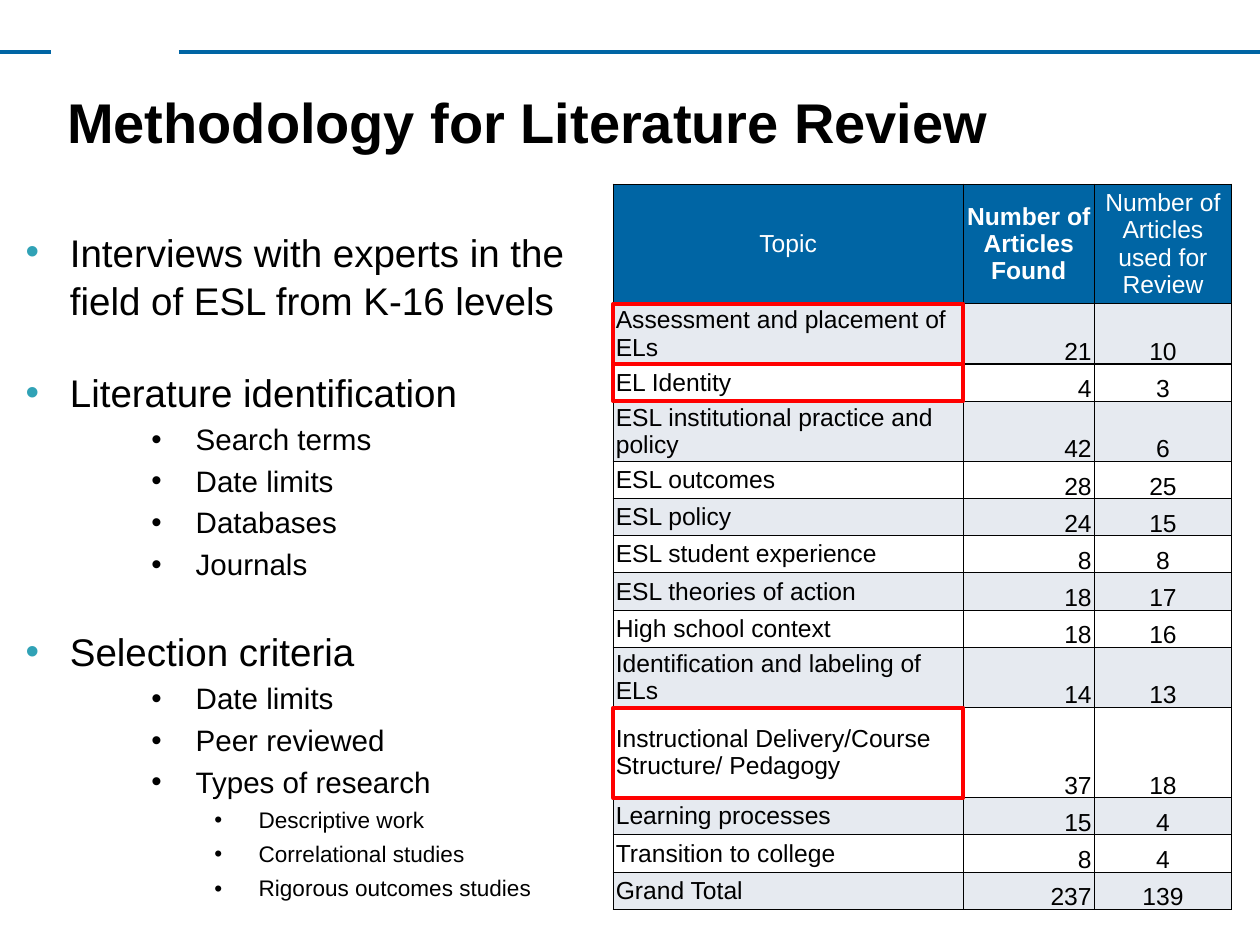
import pptx
import pptx.util
import pptx.dml.color
import pptx.enum.shapes
import pptx.enum.text
import pptx.oxml.ns
import lxml.etree

PX = 9144  # 100 px to the inch
Pt = pptx.util.Pt
ALIGN = pptx.enum.text.PP_ALIGN
ANCHOR = pptx.enum.text.MSO_ANCHOR
BLUE, BAND, WHITE, BLACK, RED, TEAL = "0065A4", "E6EAF0", "FFFFFF", "000000", "FF0000", "30A2B6"


def rgb(value):
    return pptx.dml.color.RGBColor.from_string(value)


def add(parent, tag, **attrs):
    return lxml.etree.SubElement(parent, pptx.oxml.ns.qn(tag), attrs)


prs = pptx.Presentation()
prs.slide_width, prs.slide_height = 1422 * PX, 1067 * PX
s = prs.slides.add_slide(prs.slide_layouts[6])

# Header rule with a gap
for x1, x2 in [(202, 1422), (0, 58)]:
    line = s.shapes.add_connector(pptx.enum.shapes.MSO_CONNECTOR.STRAIGHT,
                                  x1 * PX, 59 * PX, x2 * PX, 59 * PX)
    line.line.color.rgb = rgb(BLUE)
    line.line.width = Pt(3)
    add(line._element.spPr, "a:effectLst")

# Text frames for the title and the outline
frames = []
for x, y, w, h in [(66, 97, 1302, 173), (19, 246, 682, 793)]:
    tf = s.shapes.add_textbox(x * PX, y * PX, w * PX, h * PX).text_frame
    tf.word_wrap = True
    tf.margin_left = tf.margin_right = tf.margin_top = tf.margin_bottom = 10 * PX
    frames.append(tf)
title, outline = frames

# Title
p = title.paragraphs[0]
p.line_spacing = 0.9
r = p.add_run()
r.text = "Methodology for Literature Review"
r.font.name, r.font.size, r.font.bold = "Arial", Pt(45.5), True
r.font.color.rgb = rgb(BLACK)

# Outline: level, text
points = [
    (0, "Interviews with experts in the field of ESL from K-16 levels"),
    (0, "Literature identification"),
    (1, "Search terms"),
    (1, "Date limits"),
    (1, "Databases"),
    (1, "Journals"),
    (0, "Selection criteria"),
    (1, "Date limits"),
    (1, "Peer reviewed"),
    (1, "Types of research"),
    (2, "Descriptive work"),
    (2, "Correlational studies"),
    (2, "Rigorous outcomes studies"),
]
# Per level: indent, size, line spacing, space before, bullet colour
levels = [(50, 31.3, 1.04, 36, TEAL), (192, 24, 0.9, 8, BLACK), (263, 18.3, 0.9, 8, BLACK)]
for i, (level, text) in enumerate(points):
    indent, size, spacing, before, colour = levels[level]
    p = outline.add_paragraph() if i else outline.paragraphs[0]
    p.level = level
    pPr = p._p.get_or_add_pPr()
    pPr.set("marL", str(indent * PX))
    pPr.set("indent", str(-50 * PX))
    add(add(pPr, "a:buClr"), "a:srgbClr", val=colour)
    add(pPr, "a:buFont", typeface="Arial")
    add(pPr, "a:buChar", char="•")
    p.line_spacing = spacing
    if i:
        p.space_before = Pt(before)
    r = p.add_run()
    r.text = text
    r.font.name, r.font.size = "Arial", Pt(size)
    r.font.color.rgb = rgb(BLACK)

# Article table
rows = [
    ("Topic", "Number of Articles Found", "Number of Articles used for Review"),
    ("Assessment and placement of ELs", "21", "10"),
    ("EL Identity", "4", "3"),
    ("ESL institutional practice and policy", "42", "6"),
    ("ESL outcomes", "28", "25"),
    ("ESL policy", "24", "15"),
    ("ESL student experience", "8", "8"),
    ("ESL theories of action", "18", "17"),
    ("High school context", "18", "16"),
    ("Identification and labeling of ELs", "14", "13"),
    ("Instructional Delivery/Course Structure/ Pedagogy", "37", "18"),
    ("Learning processes", "15", "4"),
    ("Transition to college", "8", "4"),
    ("Grand Total", "237", "139"),
]
widths = [395, 148, 155]
heights = [135, 68, 42, 68, 42, 42, 42, 42, 42, 68, 102, 42, 42, 42]
left, top = 692, 208
table = s.shapes.add_table(len(rows), len(widths), left * PX, top * PX,
                           sum(widths) * PX, sum(heights) * PX).table
for col, w in zip(table.columns, widths):
    col.width = w * PX
for i, (row, h) in enumerate(zip(rows, heights)):
    table.rows[i].height = h * PX
    for j, text in enumerate(row):
        cell = table.cell(i, j)
        cell.margin_left = cell.margin_right = 3 * PX
        cell.margin_top = cell.margin_bottom = 0
        number = i > 0 and j > 0
        cell.vertical_anchor = ANCHOR.BOTTOM if number else ANCHOR.MIDDLE
        tcPr = cell._tc.get_or_add_tcPr()
        for side in ("a:lnL", "a:lnR", "a:lnT", "a:lnB"):
            border = add(tcPr, side, w=str(Pt(1)))
            add(add(border, "a:solidFill"), "a:srgbClr", val=BLACK)
        cell.fill.solid()
        cell.fill.fore_color.rgb = rgb(BLUE if i == 0 else BAND if i % 2 else WHITE)
        p = cell.text_frame.paragraphs[0]
        p.alignment = ALIGN.CENTER if i == 0 else (ALIGN.LEFT, ALIGN.RIGHT, ALIGN.CENTER)[j]
        if number:
            p.line_spacing = 0.63
        r = p.add_run()
        r.text = text
        r.font.name, r.font.size = "Arial", Pt(20)
        r.font.bold = i == 0 and j == 1
        r.font.color.rgb = rgb(BLACK if i else WHITE)

# Red frames around the highlighted topics
for i in (1, 2, 10):
    sp = s.shapes.add_shape(pptx.enum.shapes.MSO_SHAPE.RECTANGLE, left * PX,
                            (top + sum(heights[:i])) * PX, widths[0] * PX, heights[i] * PX)
    sp.shadow.inherit = False
    sp.fill.background()
    sp.line.color.rgb = rgb(RED)
    sp.line.width = Pt(3)

prs.save("out.pptx")
